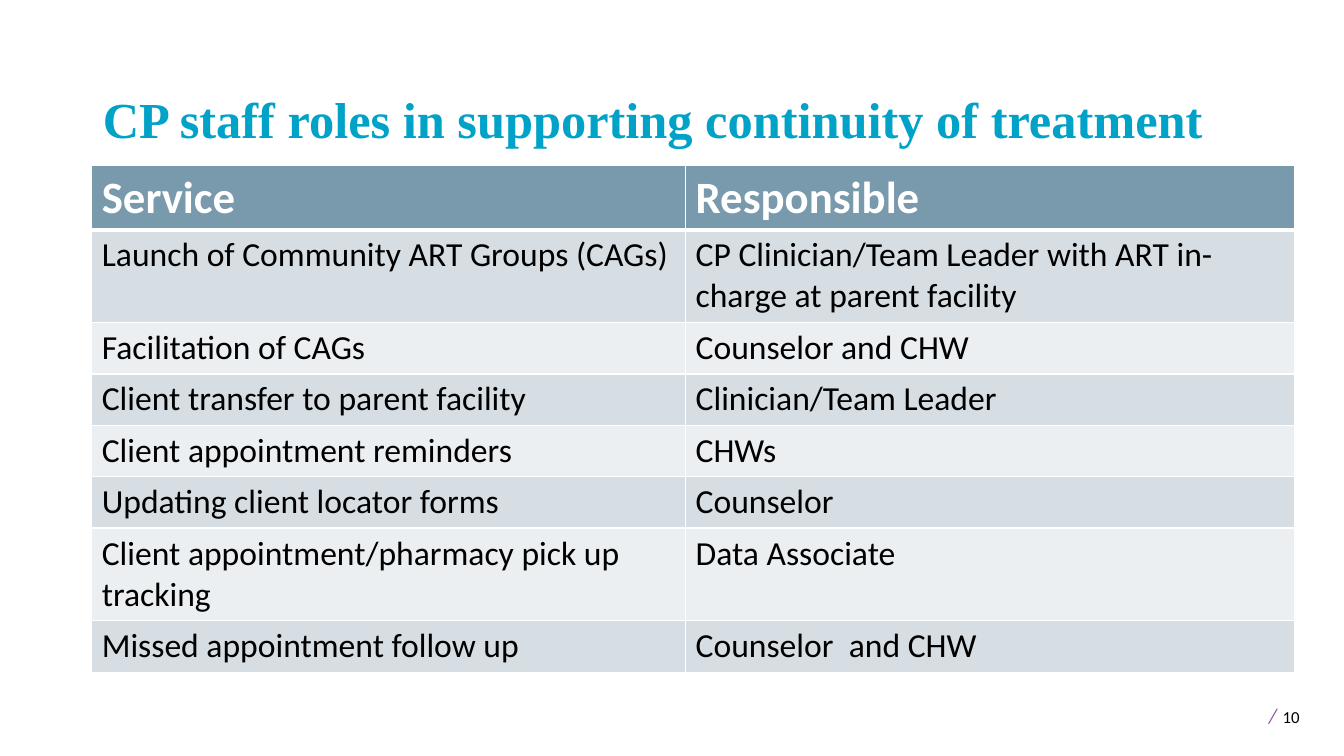
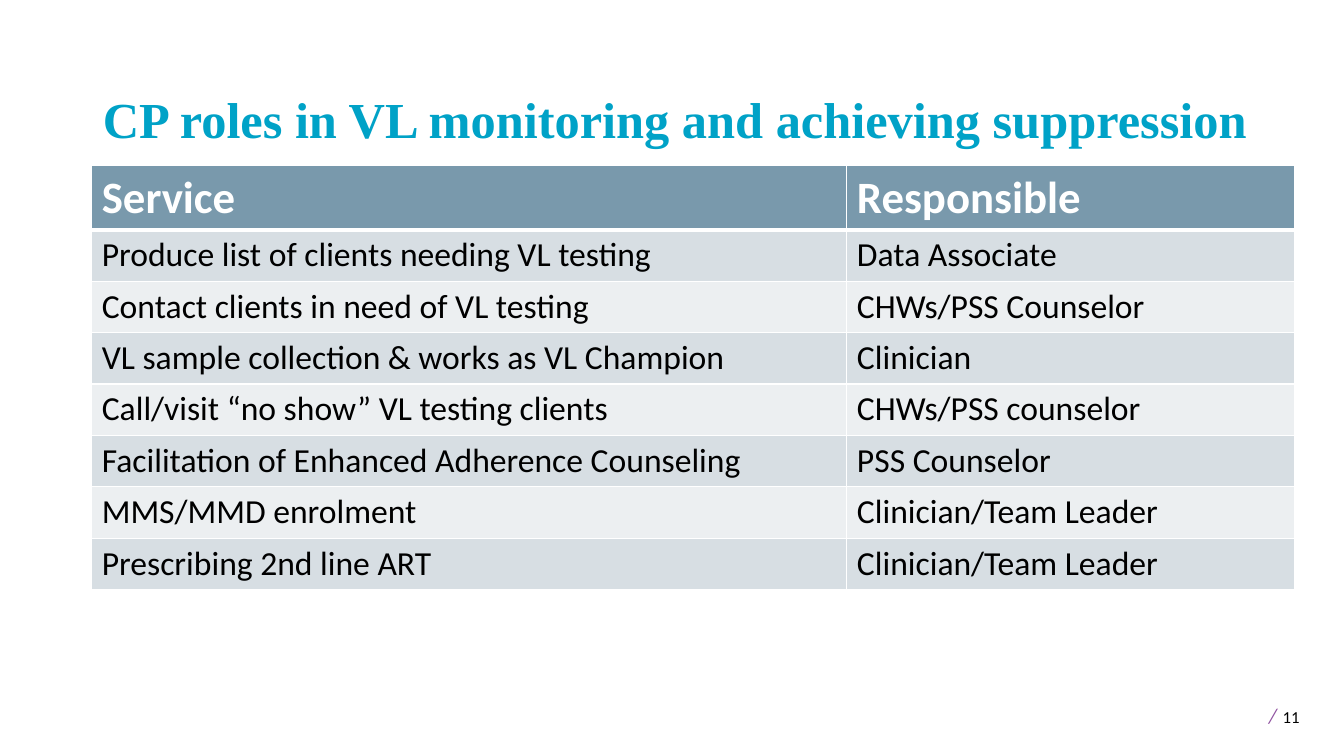
from lxml.etree import SubElement
from pptx import Presentation
from pptx.dml.color import RGBColor
from pptx.enum.text import MSO_ANCHOR, MSO_AUTO_SIZE, PP_ALIGN
from pptx.oxml import parse_xml
from pptx.oxml.ns import nsdecls, qn
from pptx.util import Inches, Pt

WHITE = RGBColor(0xFF, 0xFF, 0xFF)
BLACK = RGBColor(0x00, 0x00, 0x00)
TEAL = RGBColor(0x00, 0xA2, 0xC7)
SLATE = RGBColor(0x79, 0x99, 0xAC)
BAND_DARK = RGBColor(0xD7, 0xDE, 0xE3)
BAND_LIGHT = RGBColor(0xEC, 0xEF, 0xF1)
PURPLE = RGBColor(0x90, 0x53, 0xA1)

TITLE_FONT = {"name": "Times New Roman", "size": Pt(36), "bold": True}
HEAD_FONT = {"name": "Calibri", "size": Pt(32), "bold": True}
CELL_FONT = {"name": "Calibri", "size": Pt(24), "bold": False}
SPACE_FONT = {"name": "Calibri", "size": Pt(18)}
SLASH_FONT = {"name": "Calibri", "size": Pt(15), "italic": True}
NUMBER_FONT = {"name": "Calibri", "size": Pt(12)}

HEAD_HEIGHT, LINE_HEIGHT, CELL_PADDING = 0.64, 0.41, 0.1
TABLE_BOX = (0.91, 1.64, 11.93)
NUMBER_BOX = (12.43, 6.88, 0.87, 0.4)
HEADINGS = ("Service", "Responsible")

SLIDES = [
    {
        "number": 10,
        "title": "CP staff roles in supporting continuity of treatment",
        "title_width": 11.5,
        "service_width": 5.89,
        "two_line_rows": (1, 6),
        "roles": [
            ("Launch of Community ART Groups (CAGs)",
             "CP Clinician/Team Leader with ART in-charge at parent facility"),
            ("Facilitation of CAGs", "Counselor and CHW"),
            ("Client transfer to parent facility", "Clinician/Team Leader"),
            ("Client appointment reminders", "CHWs"),
            ("Updating client locator forms", "Counselor"),
            ("Client appointment/pharmacy pick up tracking", "Data Associate"),
            ("Missed appointment follow up", "Counselor  and CHW"),
        ],
    },
    {
        "number": 11,
        "title": "CP roles in VL monitoring and achieving suppression",
        "title_width": 12.15,
        "service_width": 7.49,
        "two_line_rows": (),
        "roles": [
            ("Produce list of clients needing VL testing", "Data Associate"),
            ("Contact clients in need of VL testing", "CHWs/PSS Counselor"),
            ("VL sample collection & works as VL Champion", "Clinician"),
            ("Call/visit “no show” VL testing clients", "CHWs/PSS counselor"),
            ("Facilitation of Enhanced Adherence Counseling", "PSS Counselor"),
            ("MMS/MMD enrolment", "Clinician/Team Leader"),
            ("Prescribing 2nd line ART", "Clinician/Team Leader"),
        ],
    },
]


def add_run(p, text, font, color):
    r = p.add_run()
    r.text = text
    for name, value in font.items():
        setattr(r.font, name, value)
    r.font.color.rgb = color


def set_title(s, text, width):
    title = s.shapes.title
    title.left, title.top = Inches(0.92), Inches(0.4)
    title.width, title.height = Inches(width), Inches(1.13)
    tf = title.text_frame
    tf.word_wrap = True
    tf.auto_size = MSO_AUTO_SIZE.NONE
    tf.vertical_anchor = MSO_ANCHOR.BOTTOM
    p = tf.paragraphs[0]
    p.alignment = PP_ALIGN.LEFT
    p.line_spacing = 0.9
    add_run(p, text, TITLE_FONT, TEAL)


def set_borders(cell, top, bottom):
    """Draw white cell borders; top and bottom are widths in points."""
    tc_pr = cell._tc.get_or_add_tcPr()
    widths = {"lnL": 1, "lnR": 1, "lnT": top, "lnB": bottom}
    for i, (side, width) in enumerate(widths.items()):
        line = parse_xml(f'<a:{side} {nsdecls("a")} w="{Pt(width)}"/>')
        fill = SubElement(line, qn("a:solidFill"))
        SubElement(fill, qn("a:srgbClr"), val=str(WHITE))
        tc_pr.insert(i, line)


def add_roles_table(s, box, roles, service_width, two_line_rows):
    left, top, width = box
    rows = [HEADINGS, *roles]
    heights = [HEAD_HEIGHT] + [
        CELL_PADDING + LINE_HEIGHT * (2 if i in two_line_rows else 1)
        for i in range(1, len(rows))
    ]
    table = s.shapes.add_table(
        len(rows), len(HEADINGS), Inches(left), Inches(top),
        Inches(width), Inches(sum(heights))).table
    table.horz_banding = False
    table.columns[0].width = Inches(service_width)
    table.columns[1].width = Inches(width - service_width)
    for i, texts in enumerate(rows):
        table.rows[i].height = Inches(heights[i])
        if i == 0:
            fill, font, color = SLATE, HEAD_FONT, WHITE
        else:
            fill = BAND_DARK if i % 2 else BAND_LIGHT
            font, color = CELL_FONT, BLACK
        for j, text in enumerate(texts):
            cell = table.cell(i, j)
            cell.fill.solid()
            cell.fill.fore_color.rgb = fill
            set_borders(cell, 3 if i == 1 else 1, 3 if i == 0 else 1)
            add_run(cell.text_frame.paragraphs[0], text, font, color)


def add_slide_number(s, box, number):
    tf = s.shapes.add_textbox(*map(Inches, box)).text_frame
    tf.word_wrap = True
    p = tf.paragraphs[0]
    add_run(p, " ", SPACE_FONT, BLACK)
    add_run(p, "/", SLASH_FONT, PURPLE)
    add_run(p, " ", SPACE_FONT, BLACK)
    add_run(p, str(number), NUMBER_FONT, BLACK)


def add_roles_slide(prs, content):
    s = prs.slides.add_slide(prs.slide_layouts.get_by_name("Title Only"))
    add_slide_number(s, NUMBER_BOX, content["number"])
    add_roles_table(s, TABLE_BOX, content["roles"],
                    content["service_width"], content["two_line_rows"])
    set_title(s, content["title"], content["title_width"])


def main():
    prs = Presentation()
    prs.slide_width, prs.slide_height = Inches(13.33), Inches(7.5)
    for content in SLIDES:
        add_roles_slide(prs, content)
    prs.save("out.pptx")


if __name__ == "__main__":
    main()
